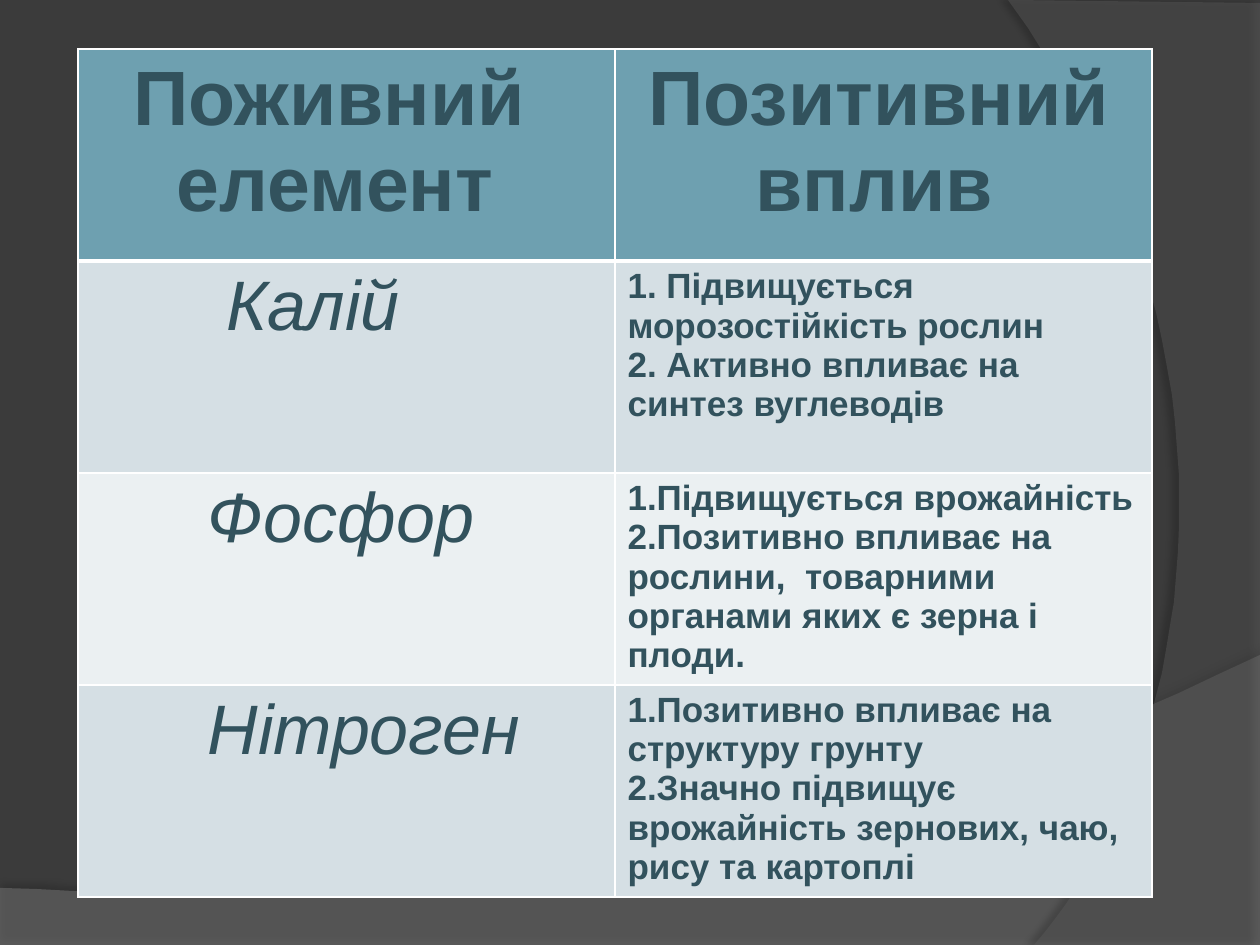
from lxml import etree
from pptx import Presentation
from pptx import util as u
from pptx.dml import color
from pptx.oxml import ns

SCALE = 914400 / 126
COLOURS = {
    "background": "3B3B3B",
    "wave": "7F7F7F",
    "arc": "5E5E5E",
    "header": "6EA0B0",
    "odd": "D5DFE4",
    "even": "EBF0F2",
    "text": "32525D",
    "border": "FFFFFF",
    "shadow": "000000",
}
FORMATS = {
    "header": {"size": u.Pt(44), "bold": True, "italic": False},
    "element": {"size": u.Pt(40), "bold": False, "italic": True},
    "effect": {"size": u.Pt(20), "bold": True, "italic": False},
}
HEADERS = [
    [("Поживний", 43), ("елемент", 86)],
    [("Позитивний", 21), ("вплив", 128)],
]
ROWS = [
    ("Калій", 136, ["1. Підвищується морозостійкість рослин",
                    "2. Активно впливає на синтез вуглеводів"]),
    ("Фосфор", 117, ["1.Підвищується врожайність",
                     "2.Позитивно впливає на рослини,  товарними органами яких є зерна і плоди."]),
    ("Нітроген", 117, ["1.Позитивно впливає на структуру грунту",
                       "2.Значно підвищує врожайність зернових, чаю, рису та картоплі"]),
]


def px(value):
    return u.Emu(round(value * SCALE))


def rgb(name):
    return color.RGBColor.from_string(COLOURS[name])


def add_node(parent, tag, **values):
    return etree.SubElement(parent, ns.qn(tag), values)


def curve(start, first, second, end, steps=40):
    points = []
    for step in range(1, steps + 1):
        t = step / steps
        weights = ((1 - t) ** 3, 3 * t * (1 - t) ** 2, 3 * t * t * (1 - t), t ** 3)
        points.append(tuple(
            round(sum(w * p for w, p in zip(weights, axis)))
            for axis in zip(start, first, second, end)))
    return points


class Painter:
    def __init__(self, deck):
        self.deck = deck
        self.font = "Arial"
        self.page = None

    def add_page(self):
        self.page = self.deck.slides.add_slide(self.deck.slide_layouts[6])
        fill = self.page.background.fill
        fill.solid()
        fill.fore_color.rgb = rgb("background")

    def add_outline(self, points, fill, opacity, shadow_opacity, distance, angle):
        builder = self.page.shapes.build_freeform(*points[0], scale=SCALE)
        builder.add_line_segments(points[1:], close=True)
        shape = builder.convert_to_shape()
        shape.shadow.inherit = False
        shape.line.fill.background()
        shape.fill.solid()
        shape.fill.fore_color.rgb = rgb(fill)
        properties = shape.element.spPr
        tint = properties.find(ns.qn("a:solidFill"))[0]
        add_node(tint, "a:alpha", val=str(opacity * 1000))
        shadow = add_node(properties.find(ns.qn("a:effectLst")), "a:outerShdw",
                          blurRad=str(u.Pt(4)), dist=str(u.Pt(distance)),
                          dir=str(angle * 60000), rotWithShape="0")
        shade = add_node(shadow, "a:srgbClr", val=COLOURS["shadow"])
        add_node(shade, "a:alpha", val=str(shadow_opacity * 1000))

    def add_table(self, left, top, widths, heights):
        table = self.page.shapes.add_table(
            len(heights), len(widths), px(left), px(top),
            px(sum(widths)), px(sum(heights))).table
        for column, width in zip(table.columns, widths):
            column.width = px(width)
        for row, height in zip(table.rows, heights):
            row.height = px(height)
        return table

    def fill_cell(self, cell, lines, style, fill, top=1, bottom=1):
        cell.fill.solid()
        cell.fill.fore_color.rgb = rgb(fill)
        properties = cell._tc.get_or_add_tcPr()
        borders = {"a:lnL": 1, "a:lnR": 1, "a:lnT": top, "a:lnB": bottom}
        for index, (tag, width) in enumerate(borders.items()):
            line = add_node(properties, tag, w=str(u.Pt(width)))
            add_node(add_node(line, "a:solidFill"), "a:srgbClr", val=COLOURS["border"])
            properties.insert(index, line)
        for index, (words, indent) in enumerate(lines):
            frame = cell.text_frame
            para = frame.add_paragraph() if index else frame.paragraphs[0]
            para._p.get_or_add_pPr().set("marL", str(px(indent)))
            span = para.add_run()
            span.text = words
            span.font.name = self.font
            span.font.color.rgb = rgb("text")
            for name, value in FORMATS[style].items():
                setattr(span.font, name, value)


def main():
    deck = Presentation()
    deck.slide_width, deck.slide_height = px(1260), px(945)
    painter = Painter(deck)
    painter.add_page()

    wave = [(0, 888), (0, 945), (1260, 945), (1260, 655)]
    wave += curve(wave[-1], (704, 919), (493, 906), wave[0])[:-1]
    painter.add_outline(wave, "wave", 45, 35, 3.5, 270)
    arc = [(1260, 3), (1260, 945), (1034, 945)]
    arc += curve(arc[-1], (1178, 780), (1283, 378), (1008, 0))
    painter.add_outline(arc, "arc", 40, 45, 4, 180)

    table = painter.add_table(78, 49, [537] * 2, [212] * 4)
    for column, lines in enumerate(HEADERS):
        painter.fill_cell(table.cell(0, column), lines, "header", "header", bottom=3)
    for row, (element, indent, effects) in enumerate(ROWS, 1):
        fill = "odd" if row % 2 else "even"
        top = 3 if row == 1 else 1
        painter.fill_cell(table.cell(row, 0), [(element, indent)], "element", fill, top)
        painter.fill_cell(table.cell(row, 1), [(effect, 0) for effect in effects],
                          "effect", fill, top)
    deck.save("out.pptx")


if __name__ == "__main__":
    main()
